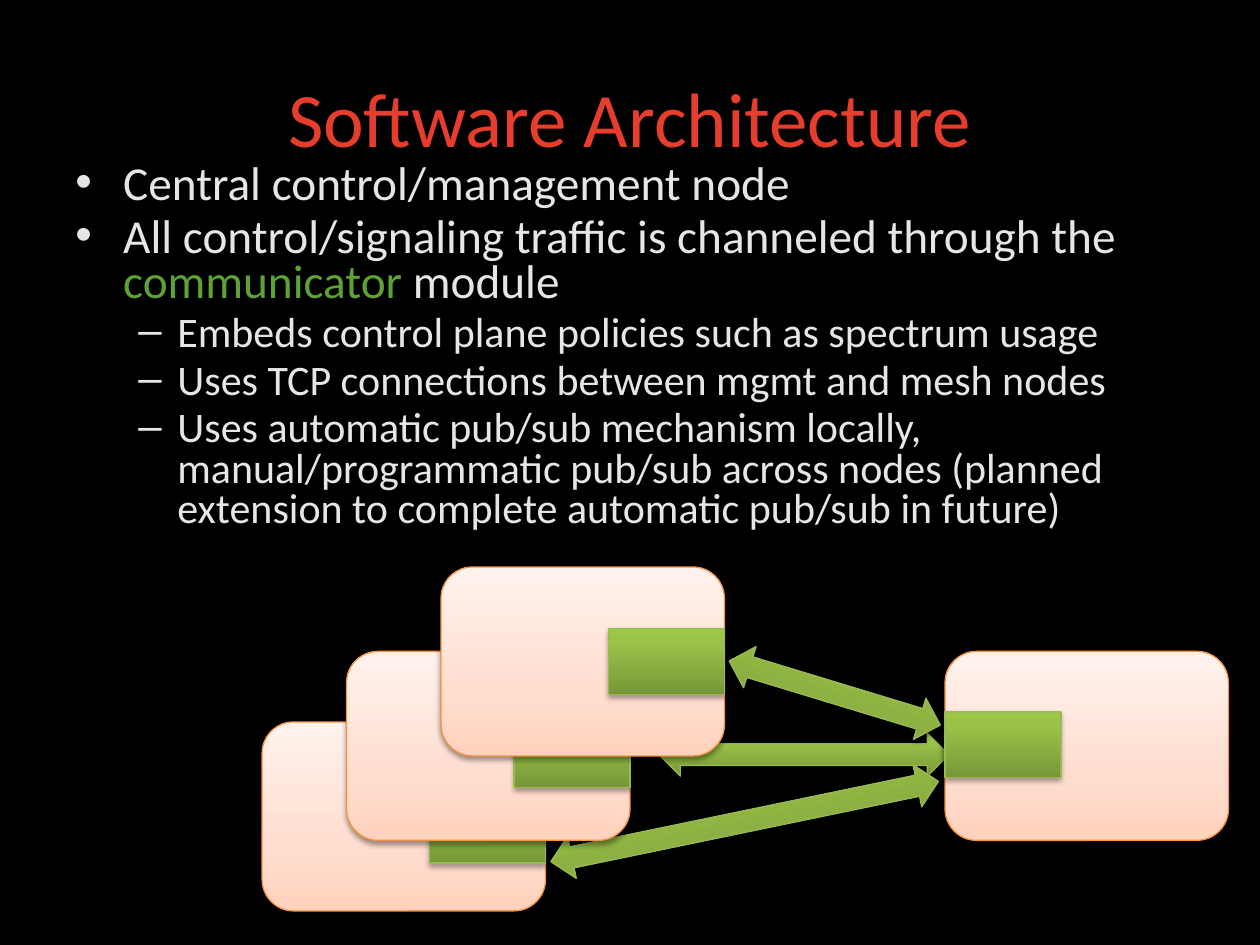
import pptx
import pptx.dml.color
import pptx.enum.shapes
import pptx.enum.text
import pptx.oxml
import pptx.oxml.ns
import pptx.util
from lxml import etree

Inches = pptx.util.Inches
Pt = pptx.util.Pt
SHAPE = pptx.enum.shapes.MSO_SHAPE
ALIGN = pptx.enum.text.PP_ALIGN
ANCHOR = pptx.enum.text.MSO_ANCHOR
qn = pptx.oxml.ns.qn

COLORS = {
    "background": "000000", "title": "E63D2C", "text": "E6E6E6",
    "accent": "5FA234", "green_line": "98B955", "node_line": "F69240",
}
GREEN = {
    "stops": [(0, "779737"), (80, "9BC348"), (100, "9DC746")],
    "line": COLORS["green_line"], "shadow": (1.8, 35),
}
PEACH = {
    "stops": [(0, "FFD2BD"), (35, "FFDED0"), (100, "FFF2ED")],
    "line": COLORS["node_line"], "shadow": (1.6, 38),
}
NODE_W, NODE_H = 2.25, 1.5
PORT_W, PORT_H = 0.92, 0.52
ARROW_H = 0.34


def rgb(color):
    return pptx.dml.color.RGBColor.from_string(color)


def sub(parent, tag, **attrs):
    return etree.SubElement(parent, qn(tag), {k: str(v) for k, v in attrs.items()})


def add_color(parent, color):
    return sub(parent, "a:srgbClr", val=color)


def add_block(slide, kind, x, y, w, h, style, rotation=0):
    """Add a shape with a vertical gradient, a thin outline and a soft shadow."""
    sp = slide.shapes.add_shape(kind, Inches(x), Inches(y), Inches(w), Inches(h))
    sp.rotation = rotation
    sp.fill.gradient()
    sp.fill.gradient_angle = 90
    spPr = sp._element.spPr
    stops = spPr.find(".//" + qn("a:gsLst"))
    for stop in list(stops):
        stops.remove(stop)
    for pos, color in style["stops"]:
        add_color(sub(stops, "a:gs", pos=pos * 1000), color)
    sp.line.color.rgb = rgb(style["line"])
    sp.line.width = Pt(0.75)

    sp.shadow.inherit = False
    distance, opacity = style["shadow"]
    shadow = sub(spPr.find(qn("a:effectLst")), "a:outerShdw", blurRad=Pt(3.1),
                 dist=Pt(distance), dir=90 * 60000, rotWithShape=0)
    sub(add_color(shadow, "000000"), "a:alpha", val=opacity * 1000)
    return sp


def add_arrow(slide, x, y, w, rotation=0):
    add_block(slide, SHAPE.LEFT_RIGHT_ARROW, x, y, w, ARROW_H, GREEN, rotation)


def add_node(slide, x, y, port_drop, port_left=False):
    """Add a node with its communicator port flush with one side."""
    add_block(slide, SHAPE.ROUNDED_RECTANGLE, x, y, NODE_W, NODE_H, PEACH)
    port_x = x if port_left else x + NODE_W - PORT_W
    add_block(slide, SHAPE.RECTANGLE, port_x, y + port_drop, PORT_W, PORT_H, GREEN)


def add_text(slide, box, paragraphs, size=27, color="text", align=ALIGN.LEFT,
             anchor=ANCHOR.TOP, bullets=False):
    """Add paragraphs given as (level, [(text, colour or None), ...])."""
    tf = slide.shapes.add_textbox(*map(Inches, box)).text_frame
    tf.word_wrap = True
    tf.vertical_anchor = anchor
    for i, (level, runs) in enumerate(paragraphs):
        p = tf.paragraphs[0] if i == 0 else tf.add_paragraph()
        p.alignment = align
        if bullets:
            p.level = level
            p.line_spacing = 0.8
            if i:
                p.space_before = Pt((4.6, 4.2)[level])
            margin, hang, char = ((0.38, 0.38, "•"), (0.81, 0.31, "–"))[level]
            pPr = p._p.get_or_add_pPr()
            pPr.set("marL", str(Inches(margin)))
            pPr.set("indent", str(-Inches(hang)))
            sub(pPr, "a:buFont", typeface="Arial")
            sub(pPr, "a:buChar", char=char)
        for text, run_color in runs:
            r = p.add_run()
            r.text = text
            r.font.name = "Calibri"
            r.font.size = Pt(size - 3 * level)
            r.font.color.rgb = rgb(COLORS[run_color or color])


def add_heading(slide, box):
    add_text(slide, box, [(0, [("Software Architecture", None)])], size=44,
             color="title", align=ALIGN.CENTER, anchor=ANCHOR.MIDDLE)


def add_points(slide, box):
    add_text(slide, box, [
        (0, [("Central control/management node", None)]),
        (0, [("All control/signaling traffic is channeled through the ", None),
             ("communicator ", "accent"), ("module", None)]),
        (1, [("Embeds control plane policies such as spectrum usage", None)]),
        (1, [("Uses TCP connections between mgmt and mesh nodes", None)]),
        (1, [("Uses automatic pub/sub mechanism locally, manual/programmatic "
              "pub/sub across nodes (planned extension to complete automatic "
              "pub/sub in future)", None)]),
    ], bullets=True)


def add_diagram(slide, x, y):
    """Draw stacked mesh nodes linked to the management node on the right."""
    add_arrow(slide, x + 3.15, y + 1.32, 2.3)
    add_arrow(slide, x + 2.26, y + 1.85, 3.14, rotation=-11.7)
    add_node(slide, x + 5.42, y + 0.67, 0.48, port_left=True)
    for dx, dy, port_drop in ((0, 1.23, 0.6), (0.67, 0.67, 0.56), (1.42, 0, 0.49)):
        add_node(slide, x + dx, y + dy, port_drop)
    add_arrow(slide, x + 3.67, y + 0.83, 1.75, rotation=16.9)


def main():
    prs = pptx.Presentation()
    prs.slide_width, prs.slide_height = Inches(10), Inches(7.5)
    slide = prs.slides.add_slide(prs.slide_layouts[6])
    slide.background.fill.solid()
    slide.background.fill.fore_color.rgb = rgb(COLORS["background"])
    add_heading(slide, (0.5, 0.3, 9, 1.25))
    add_points(slide, (0.5, 1.25, 9, 3.25))
    add_diagram(slide, 2.08, 4.5)
    prs.save("out.pptx")


if __name__ == "__main__":
    main()
